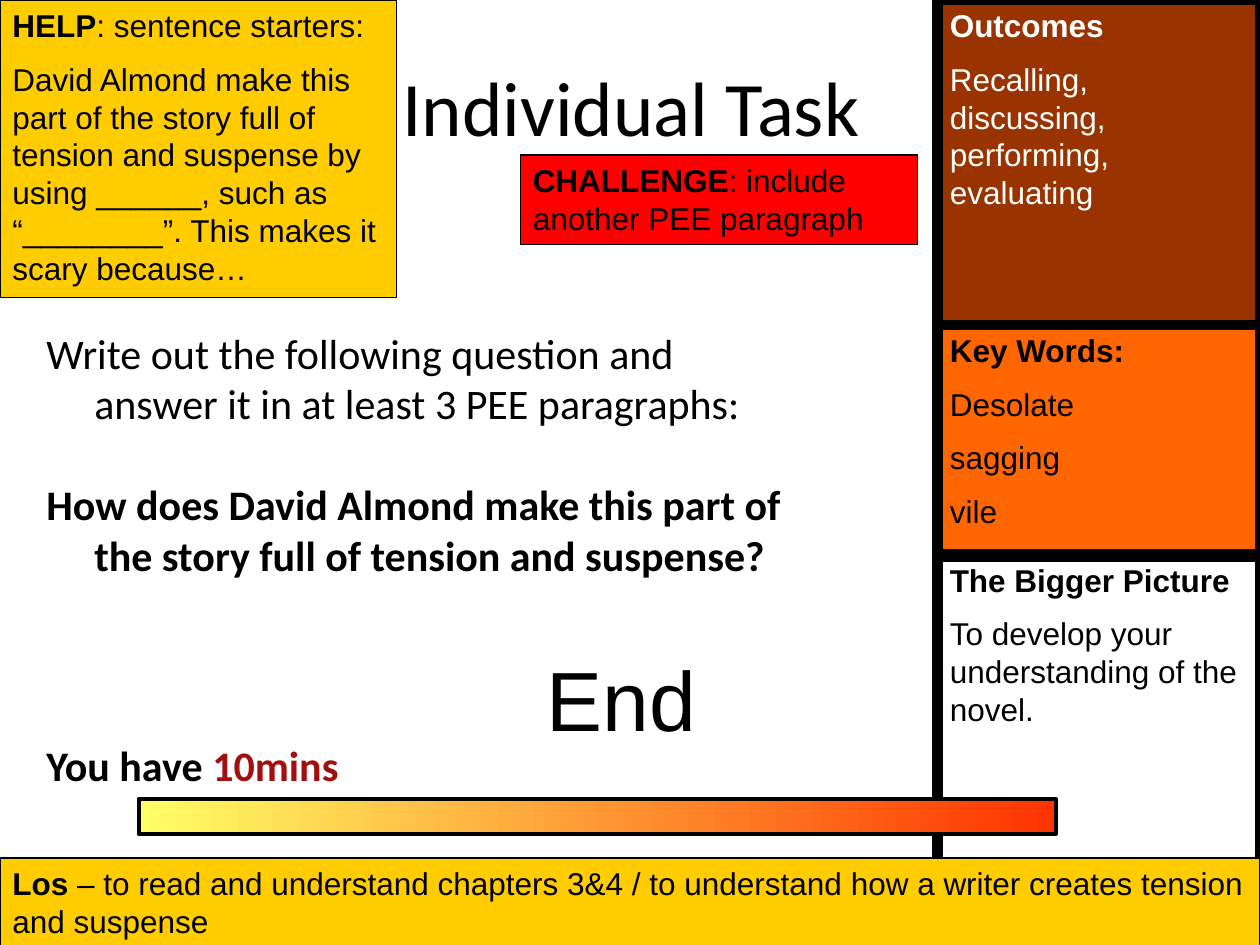
from dataclasses import dataclass
from typing import Optional

from pptx import Presentation
from pptx import util as u
from pptx.dml.color import RGBColor
from pptx.enum import shapes, text


@dataclass(frozen=True)
class Theme:
    black: str = "000000"
    white: str = "FFFFFF"
    brown: str = "993300"
    orange: str = "FF6600"
    gold: str = "FFCC00"
    red: str = "FF0000"
    dark_red: str = "A10F0F"
    timer_start: str = "FFFF66"
    timer_end: str = "FF3300"
    panel_font: str = "Arial"
    body_font: str = "Calibri"
    panel_size: float = 18
    body_size: float = 24
    title_size: float = 44
    end_size: float = 48
    thin: float = 0.75
    medium: float = 2.25
    thick: float = 6


THEME = Theme()
CELL = u.Inches(0.1)  # the slide is a grid of 100 columns by 75 rows
COLUMNS, ROWS = 100, 75


@dataclass(frozen=True)
class Area:
    col: float
    row: float
    cols: float
    rows: float

    def box(self) -> list[u.Emu]:
        return [u.Emu(round(n * CELL)) for n in (self.col, self.row, self.cols, self.rows)]


@dataclass(frozen=True)
class Run:
    words: str
    bold: bool = False
    color: str = THEME.black


@dataclass(frozen=True)
class Style:
    font: str
    size: float


@dataclass(frozen=True)
class Panel:
    area: Area
    fill: Optional[str]
    line: float
    paragraphs: list[list[Run]]


PANEL_STYLE = Style(THEME.panel_font, THEME.panel_size)
BODY_STYLE = Style(THEME.body_font, THEME.body_size)


def add_runs(paragraph, runs: list[Run], style: Style) -> None:
    for item in runs:
        run = paragraph.add_run()
        run.text = item.words
        run.font.name = style.font
        run.font.size = u.Pt(style.size)
        run.font.bold = item.bold
        run.font.color.rgb = RGBColor.from_string(item.color)


def write(frame, paragraphs: list[list[Run]], style: Style, gaps: list[float],
          align=text.PP_ALIGN.LEFT) -> None:
    """Fill a frame; gaps are the points of space before each paragraph."""
    for i, (runs, gap) in enumerate(zip(paragraphs, gaps)):
        paragraph = frame.add_paragraph() if i else frame.paragraphs[0]
        paragraph.alignment = align
        paragraph.space_before = u.Pt(gap)
        add_runs(paragraph, runs, style)


def add_rect(slide, area: Area, fill: Optional[str] = None, line: Optional[float] = None):
    rect = slide.shapes.add_shape(shapes.MSO_SHAPE.RECTANGLE, *area.box())
    rect.shadow.inherit = False
    if fill:
        rect.fill.solid()
        rect.fill.fore_color.rgb = RGBColor.from_string(fill)
    else:
        rect.fill.background()
    if line:
        rect.line.width = u.Pt(line)
        rect.line.color.rgb = RGBColor.from_string(THEME.black)
    else:
        rect.line.fill.background()
    return rect


def add_panel(slide, panel: Panel) -> None:
    frame = add_rect(slide, panel.area, panel.fill, panel.line).text_frame
    frame.word_wrap = True
    frame.vertical_anchor = text.MSO_ANCHOR.TOP
    gaps = [0] + [THEME.panel_size / 2] * (len(panel.paragraphs) - 1)
    write(frame, panel.paragraphs, PANEL_STYLE, gaps)


def add_text(slide, area: Area, wrap: bool = True):
    frame = slide.shapes.add_textbox(*area.box()).text_frame
    frame.word_wrap = wrap
    return frame


def sidebar(row: float, rows: float, fill: Optional[str], heading: str,
            lines: list[str], color: str = THEME.black) -> Panel:
    paragraphs = [[Run(heading, True, color)]] + [[Run(line, False, color)] for line in lines]
    return Panel(Area(74.4, row, 25.6, rows), fill, THEME.thick, paragraphs)


PANELS = [
    # Sidebar
    sidebar(0, 31.9, THEME.brown, "Outcomes",
            ["Recalling, discussing, performing, evaluating"], THEME.white),
    sidebar(25.8, 18.4, THEME.orange, "Key Words:", ["Desolate", "sagging", "vile"]),
    sidebar(44, 33.4, None, "The Bigger Picture",
            ["To develop your understanding of the novel."]),
    # Learning objectives
    Panel(Area(0, 68.1, COLUMNS, 7.1), THEME.gold, THEME.thin, [
        [Run("Los", True),
         Run(" – to read and understand chapters 3&4 / to understand how a writer "
             "creates tension and suspense")]]),
    # Help and challenge
    Panel(Area(0, 0, 31.5, 23.6), THEME.gold, THEME.thin, [
        [Run("HELP", True), Run(": sentence starters:")],
        [Run("David Almond make this part of the story full of tension and suspense "
             "by using ______, such as “________”. This makes it scary because…")]]),
    Panel(Area(41.3, 12.3, 31.5, 7.1), THEME.red, THEME.thin, [
        [Run("CHALLENGE", True), Run(": include another PEE paragraph")]]),
]

TASK = [
    [Run("Write out the following question and answer it in at least 3 PEE paragraphs:")],
    [Run("How does David Almond make this part of the story full of tension and suspense?", True)],
    [Run("You have ", True), Run("10mins", True, THEME.dark_red)],
]


def add_timer(slide) -> None:
    area = Area(11, 63.4, 72.8, 2.8)
    bar = add_rect(slide, area)
    bar.fill.gradient()
    bar.fill.gradient_angle = 0
    for stop, color in zip(bar.fill.gradient_stops, (THEME.timer_start, THEME.timer_end)):
        stop.color.rgb = RGBColor.from_string(color)
    add_rect(slide, area, line=THEME.medium)
    end_label = add_text(slide, Area(42.4, 50.9, 13.9, 9), wrap=False)
    write(end_label, [[Run("End")]], Style(THEME.panel_font, THEME.end_size), [0])


def add_task(slide) -> None:
    frame = add_text(slide, Area(2.7, 25.5, 62.2, 49.5))
    line = THEME.body_size * 1.2
    write(frame, TASK, BODY_STYLE, [0, line, 3 * line + THEME.body_size / 5])
    for paragraph in frame.paragraphs:  # hanging indent
        properties = paragraph._p.get_or_add_pPr()
        properties.set("marL", str(u.Inches(0.38)))
        properties.set("indent", str(-u.Inches(0.38)))


def main() -> None:
    deck = Presentation()
    deck.slide_width, deck.slide_height = COLUMNS * CELL, ROWS * CELL
    slide = deck.slides.add_slide(deck.slide_layouts[6])

    for panel in PANELS:
        add_panel(slide, panel)

    # Title
    title = add_text(slide, Area(5.1, 2.1, 90, 12.5))
    title.vertical_anchor = text.MSO_ANCHOR.MIDDLE
    write(title, [[Run("Individual Task")]], Style(THEME.body_font, THEME.title_size), [0],
          text.PP_ALIGN.CENTER)

    add_timer(slide)
    add_task(slide)
    deck.save("out.pptx")


if __name__ == "__main__":
    main()
